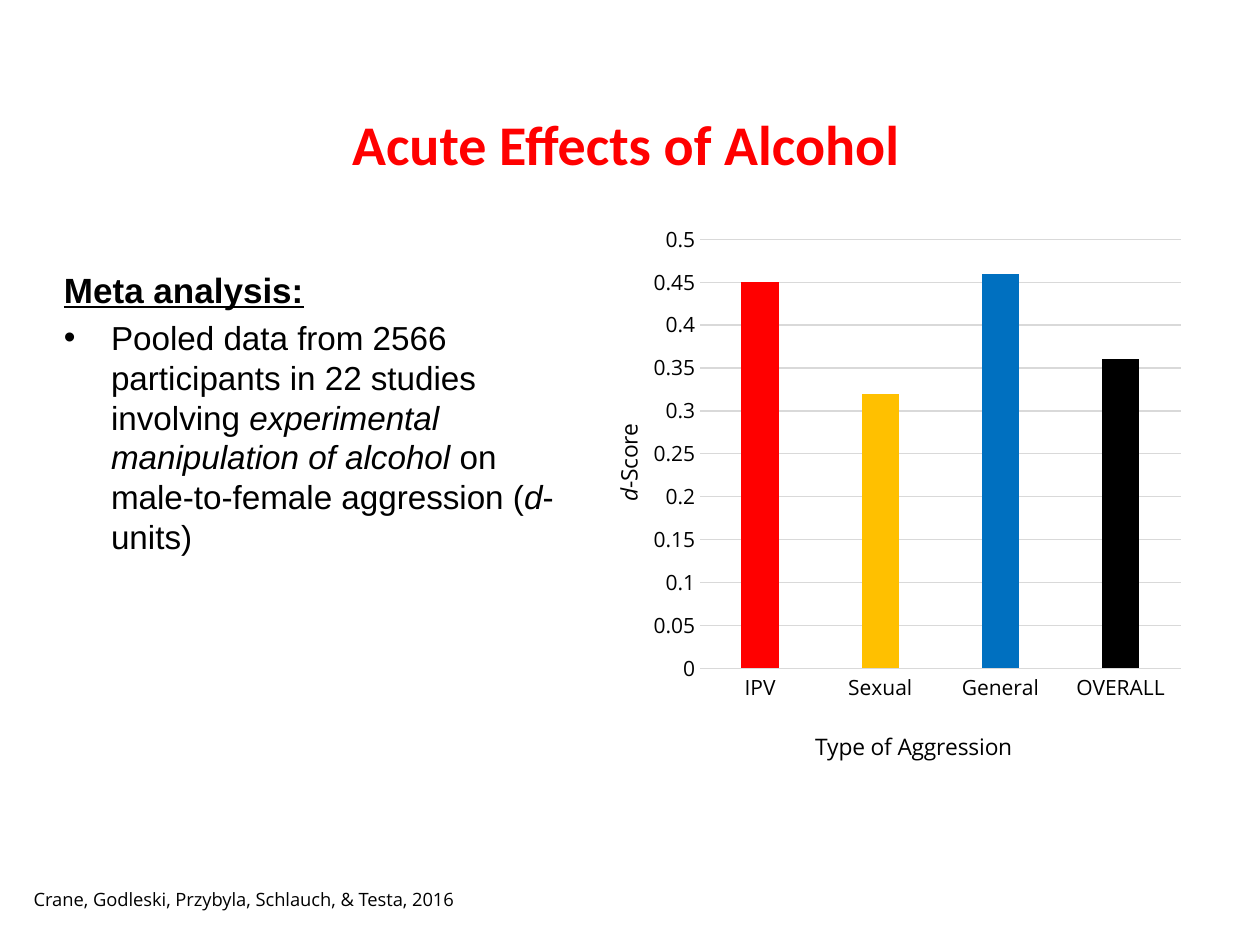
from dataclasses import dataclass

from lxml.etree import SubElement
from pptx import Presentation
from pptx.chart.data import CategoryChartData
from pptx.dml.color import RGBColor
from pptx.enum.chart import XL_CHART_TYPE, XL_TICK_MARK
from pptx.enum.text import MSO_ANCHOR, MSO_AUTO_SIZE, PP_ALIGN
from pptx.oxml.ns import qn
from pptx.util import Cm, Pt


@dataclass(frozen=True)
class Theme:
    red: str = "FF0000"
    amber: str = "FFC000"
    blue: str = "0070C0"
    black: str = "000000"
    grid: str = "D9D9D9"
    title_font: str = "Calibri"
    body_font: str = "Arial"
    label_font: str = "Open Sans"
    title_size: float = 32
    heading_size: float = 20
    body_size: float = 19
    axis_title_size: float = 13
    axis_size: float = 12
    citation_size: float = 10.5


@dataclass(frozen=True)
class Box:
    left: float
    top: float
    width: float
    height: float

    def lengths(self) -> tuple:
        return Cm(self.left), Cm(self.top), Cm(self.width), Cm(self.height)


@dataclass(frozen=True)
class Span:
    text: str
    italic: bool = False


@dataclass(frozen=True)
class Bar:
    category: str
    score: float
    color: str


THEME = Theme()
BARS = [
    Bar("IPV", 0.45, THEME.red),
    Bar("Sexual", 0.32, THEME.amber),
    Bar("General", 0.46, THEME.blue),
    Bar("OVERALL", 0.36, THEME.black),
]
FINDING = [
    Span("Pooled data from 2566 participants in 22 studies involving "),
    Span("experimental manipulation of alcohol ", True),
    Span("on male-to-female aggression ("),
    Span("d", True),
    Span("-units)"),
]


def style_font(font, name: str, size: float, color: str = THEME.black, bold: bool = False) -> None:
    font.name = name
    font.size = Pt(size)
    font.bold = bold
    font.color.rgb = RGBColor.from_string(color)


def add_text_frame(slide, box: Box, wrap: bool = True):
    text_frame = slide.shapes.add_textbox(*box.lengths()).text_frame
    text_frame.word_wrap = wrap
    return text_frame


def add_spans(paragraph, spans: list[Span], font_name: str, size: float) -> None:
    for span in spans:
        run = paragraph.add_run()
        run.text = span.text
        style_font(run.font, font_name, size)
        run.font.italic = span.italic


def add_bullet(paragraph, indent: float) -> None:
    properties = paragraph._p.get_or_add_pPr()
    properties.set("marL", str(Cm(indent)))
    properties.set("indent", str(-Cm(indent)))
    SubElement(properties, qn("a:buFont"), typeface=THEME.body_font)
    SubElement(properties, qn("a:buChar"), char="•")


def place_chart_part(element, index: int, **fractions: float) -> None:
    for previous in element.findall(qn("c:layout")):
        element.remove(previous)
    layout = SubElement(element, qn("c:layout"))
    element.insert(index, layout)
    manual = SubElement(layout, qn("c:manualLayout"))
    if "w" in fractions:
        SubElement(manual, qn("c:layoutTarget"), val="inner")
    for mode in ("xMode", "yMode"):
        SubElement(manual, qn(f"c:{mode}"), val="edge")
    for name, fraction in fractions.items():
        SubElement(manual, qn(f"c:{name}"), val=str(fraction))


def style_axis(axis, title: list[Span], x: float, y: float) -> None:
    axis.major_tick_mark = XL_TICK_MARK.NONE
    axis.minor_tick_mark = XL_TICK_MARK.NONE
    style_font(axis.tick_labels.font, THEME.label_font, THEME.axis_size)
    paragraph = axis.axis_title.text_frame.paragraphs[0]
    add_spans(paragraph, title, THEME.label_font, THEME.axis_title_size)
    place_chart_part(axis.axis_title._element, 1, x=x, y=y)


def style_line(line) -> None:
    line.color.rgb = RGBColor.from_string(THEME.grid)
    line.width = Pt(0.75)


def add_score_chart(slide, box: Box) -> None:
    data = CategoryChartData()
    data.categories = [bar.category for bar in BARS]
    data.add_series("Series 1", [bar.score for bar in BARS])
    chart = slide.shapes.add_chart(XL_CHART_TYPE.COLUMN_CLUSTERED, *box.lengths(), data).chart
    chart.has_legend = False
    chart.has_title = False
    style_font(chart.font, THEME.label_font, 10)

    plot = chart.plots[0]
    plot.vary_by_categories = False
    plot.gap_width = 219
    plot.overlap = -27
    for index, bar in enumerate(BARS):
        fill = plot.series[0].points[index].format.fill
        fill.solid()
        fill.fore_color.rgb = RGBColor.from_string(bar.color)

    style_axis(chart.category_axis, [Span("Type of Aggression")], 0.38, 0.9)
    style_line(chart.category_axis.format.line)
    value_axis = chart.value_axis
    style_axis(value_axis, [Span("d", True), Span("-Score")], 0.05, 0.36)
    value_axis.minimum_scale = 0
    value_axis.maximum_scale = 0.5
    value_axis.major_unit = 0.05
    value_axis.format.line.fill.background()
    style_line(value_axis.major_gridlines.format.line)
    plot_area = chart._chartSpace.find(".//" + qn("c:plotArea"))
    place_chart_part(plot_area, 0, x=0.2, y=0.04, w=0.78, h=0.76)


def add_title(slide, box: Box) -> None:
    text_frame = add_text_frame(slide, box)
    text_frame.text = "Acute Effects of Alcohol"
    text_frame.vertical_anchor = MSO_ANCHOR.MIDDLE
    paragraph = text_frame.paragraphs[0]
    paragraph.alignment = PP_ALIGN.CENTER
    style_font(paragraph.runs[0].font, THEME.title_font, THEME.title_size, THEME.red, True)


def add_body(slide, box: Box) -> None:
    text_frame = add_text_frame(slide, box)
    text_frame.text = "Meta analysis:"
    heading = text_frame.paragraphs[0].runs[0]
    style_font(heading.font, THEME.body_font, THEME.heading_size, bold=True)
    heading.font.underline = True
    paragraph = text_frame.add_paragraph()
    paragraph.space_before = Pt(4)
    add_bullet(paragraph, 0.95)
    add_spans(paragraph, FINDING, THEME.body_font, THEME.body_size)


def add_citation(slide, box: Box) -> None:
    text_frame = add_text_frame(slide, box, wrap=False)
    text_frame.auto_size = MSO_AUTO_SIZE.SHAPE_TO_FIT_TEXT
    text_frame.text = "Crane, Godleski, Przybyla, Schlauch, & Testa, 2016"
    style_font(text_frame.paragraphs[0].runs[0].font, THEME.label_font, THEME.citation_size)


def main() -> None:
    presentation = Presentation()
    presentation.slide_width = Cm(25.4)
    presentation.slide_height = Cm(19.05)
    slide = presentation.slides.add_slide(presentation.slide_layouts[6])
    add_title(slide, Box(1.19, 1.7, 22.86, 2.39))
    add_body(slide, Box(1.04, 5.28, 10.59, 9.19))
    add_score_chart(slide, Box(11.63, 4.37, 12.42, 11.38))
    add_citation(slide, Box(0.43, 17.78, 9.09, 0.71))
    presentation.save("out.pptx")


if __name__ == "__main__":
    main()
